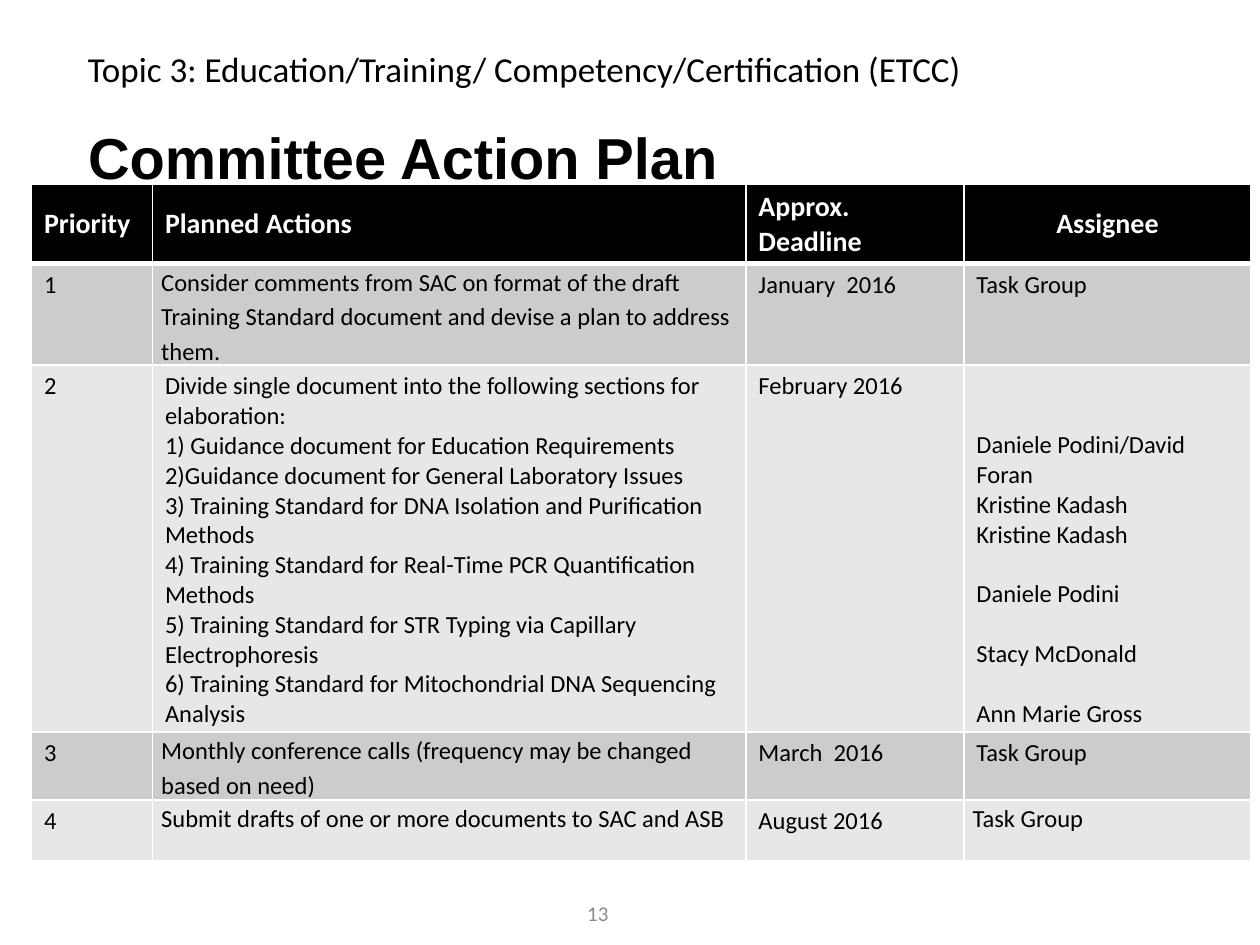
from dataclasses import dataclass

from lxml import etree
from pptx import Presentation
from pptx.dml.color import RGBColor
from pptx.enum import text
from pptx.oxml import ns
from pptx.util import Inches, Pt

COLORS = {
    "black": "000000",
    "white": "FFFFFF",
    "dark band": "CCCCCC",
    "light band": "E7E7E7",
    "page number": "8C8C8C",
}
COLUMN_WIDTHS = (0.96, 4.71, 1.73, 2.28)
ROW_HEIGHTS = (0.6, 0.65, 2.66, 0.53, 0.48)
LINE_POINTS = 17  # one line of 14 point cell text


@dataclass(frozen=True)
class Style:
    size: float
    color: str = "black"
    font: str = "Calibri"
    bold: bool = False
    align: text.PP_ALIGN = text.PP_ALIGN.LEFT
    line_spacing: float = 1.0


@dataclass(frozen=True)
class Line:
    words: str
    lines_before: int = 0


@dataclass(frozen=True)
class Entry:
    """Content of one table cell; tight cells have narrow margins and open lines."""
    lines: tuple[Line, ...]
    tight: bool = False
    margin_top: float = 0.05


def entry(*words: str, tight: bool = False) -> Entry:
    return Entry(tuple(Line(item) for item in words), tight)


HEADINGS = ("Priority", "Planned Actions", "Approx. Deadline", "Assignee")
SECTIONS = entry(
    "Divide single document into the following sections for elaboration:",
    "1) Guidance document for Education Requirements",
    "2)Guidance document for General Laboratory Issues",
    "3) Training Standard for DNA Isolation and Purification Methods",
    "4) Training Standard for Real-Time PCR Quantification Methods",
    "5) Training Standard for STR Typing via Capillary Electrophoresis",
    "6) Training Standard for Mitochondrial DNA Sequencing Analysis",
)
SECTION_ASSIGNEES = Entry(
    (
        Line("Daniele Podini/David Foran"),
        Line("Kristine Kadash"),
        Line("Kristine Kadash"),
        Line("Daniele Podini", 1),
        Line("Stacy McDonald", 1),
        Line("Ann Marie Gross", 1),
    ),
    margin_top=0.52,
)
ACTIONS = (
    (entry("Consider comments from SAC on format of the draft Training Standard "
           "document and devise a plan to address them.", tight=True),
     entry("January  2016"), entry("Task Group")),
    (SECTIONS, entry("February 2016"), SECTION_ASSIGNEES),
    (entry("Monthly conference calls (frequency may be changed based on need)",
           tight=True),
     entry("March  2016"), entry("Task Group")),
    (entry("Submit drafts of one or more documents to SAC and ASB", tight=True),
     entry("August 2016"), entry("Task Group", tight=True)),
)


def rgb(color: str) -> RGBColor:
    return RGBColor.from_string(COLORS[color])


def write_lines(frame, lines: tuple[Line, ...], style: Style) -> None:
    for index, line in enumerate(lines):
        paragraph = frame.add_paragraph() if index else frame.paragraphs[0]
        paragraph.alignment = style.align
        paragraph.line_spacing = style.line_spacing
        if line.lines_before:
            paragraph.space_before = Pt(line.lines_before * LINE_POINTS)
        run = paragraph.add_run()
        run.text = line.words
        run.font.name = style.font
        run.font.size = Pt(style.size)
        run.font.bold = style.bold
        run.font.color.rgb = rgb(style.color)


def add_text(slide, left: float, top: float, width: float, height: float,
             words: str, style: Style, anchor=text.MSO_ANCHOR.MIDDLE) -> None:
    box = slide.shapes.add_textbox(
        Inches(left), Inches(top), Inches(width), Inches(height))
    box.text_frame.word_wrap = True
    box.text_frame.vertical_anchor = anchor
    write_lines(box.text_frame, (Line(words),), style)


def set_borders(cell, top: float, bottom: float) -> None:
    """Draw white cell borders; top and bottom widths are in points."""
    properties = cell._tc.get_or_add_tcPr()
    widths = {"lnL": 1, "lnR": 1, "lnT": top, "lnB": bottom}
    for index, (side, width) in enumerate(widths.items()):
        border = etree.Element(ns.qn(f"a:{side}"), w=str(Pt(width)))
        fill = etree.SubElement(border, ns.qn("a:solidFill"))
        etree.SubElement(fill, ns.qn("a:srgbClr"), val=COLORS["white"])
        properties.insert(index, border)


def fill_cell(cell, content: Entry, style: Style, background: str,
              anchor=text.MSO_ANCHOR.TOP) -> None:
    side = 0.07 if content.tight else 0.1
    cell.margin_left = cell.margin_right = Inches(side)
    cell.margin_top = Inches(0 if content.tight else content.margin_top)
    cell.margin_bottom = Inches(0 if content.tight else 0.05)
    cell.vertical_anchor = anchor
    cell.fill.solid()
    cell.fill.fore_color.rgb = rgb(background)
    write_lines(cell.text_frame, content.lines, style)


def add_action_table(slide) -> None:
    frame = slide.shapes.add_table(
        len(ROW_HEIGHTS), len(COLUMN_WIDTHS),
        Inches(0.25), Inches(1.46), Inches(9.68), Inches(5.44))
    table = frame.table
    table.first_row = table.horz_banding = False
    for column, width in zip(table.columns, COLUMN_WIDTHS):
        column.width = Inches(width)
    for row, height in zip(table.rows, ROW_HEIGHTS):
        row.height = Inches(height)
    frame.height = Inches(5.44)

    for column, heading in enumerate(HEADINGS):
        centred = heading == "Assignee"
        align = text.PP_ALIGN.CENTER if centred else text.PP_ALIGN.LEFT
        cell = table.cell(0, column)
        fill_cell(cell, entry(heading), Style(16, "white", bold=True, align=align),
                  "black", text.MSO_ANCHOR.MIDDLE)
        set_borders(cell, top=1, bottom=3)

    for priority, action in enumerate(ACTIONS, start=1):
        background = "dark band" if priority % 2 else "light band"
        for column, content in enumerate((entry(str(priority)), *action)):
            cell = table.cell(priority, column)
            style = Style(14, line_spacing=1.15 if content.tight else 1.0)
            fill_cell(cell, content, style, background)
            set_borders(cell, top=3 if priority == 1 else 1, bottom=1)


def main() -> None:
    presentation = Presentation()
    presentation.slide_width = Inches(10)
    presentation.slide_height = Inches(7.5)
    slide = presentation.slides.add_slide(presentation.slide_layouts[6])

    add_text(slide, 0.6, 0.55, 8.62, 1.45, "Committee Action Plan",
             Style(33, font="Arial", bold=True, line_spacing=0.9))
    add_action_table(slide)
    add_text(slide, 0.6, 0.33, 7.36, 0.44,
             "Topic 3: Education/Training/ Competency/Certification (ETCC)",
             Style(20), text.MSO_ANCHOR.TOP)
    add_text(slide, 3.62, 7.05, 2.25, 0.4, "13",
             Style(12, "page number", align=text.PP_ALIGN.CENTER))
    presentation.save("out.pptx")


if __name__ == "__main__":
    main()
